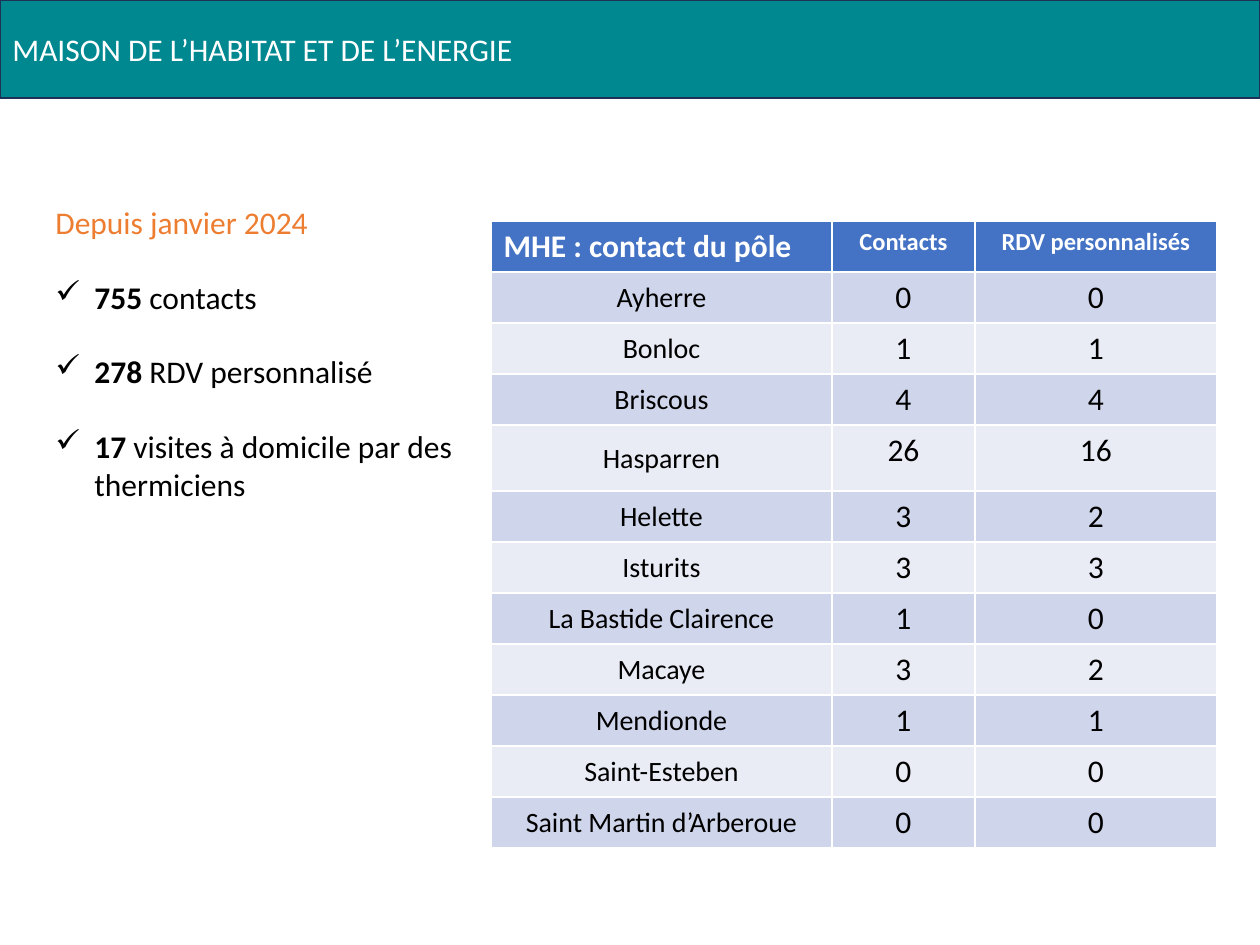
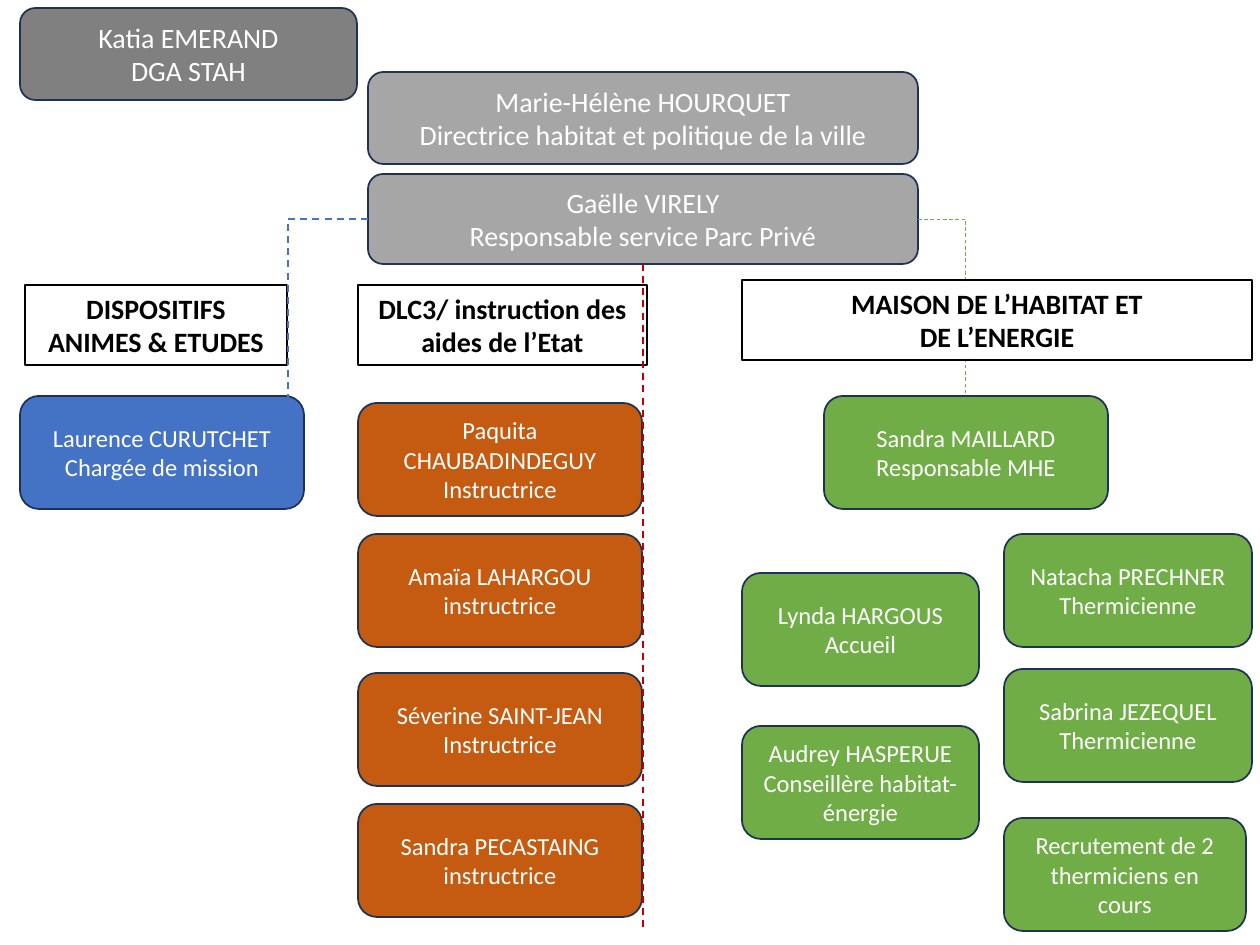
from lxml import etree
from pptx import Presentation
from pptx.dml.color import RGBColor
from pptx.enum.dml import MSO_LINE as Dash
from pptx.enum.shapes import MSO_CONNECTOR as Link, MSO_SHAPE as Form
from pptx.enum.text import MSO_ANCHOR as Anchor, PP_ALIGN as Align
from pptx.oxml.ns import qn
from pptx.util import Pt

SCALE = 914400 / 126
FONT = "Calibri"
WHITE, BLACK, NAVY, TEAL = "FFFFFF", "000000", "1E3256", "008891"
BLUE, ORANGE, RUST, GREEN, RED = "4472C4", "ED7D31", "C55A11", "70AD47", "C00000"
DARK, GREY = "808080", "A6A6A6"
BANDS = ("E9EBF5", "CFD5EA")

FACTS = [
    ("755", " contacts"),
    ("278", " RDV personnalisé"),
    ("17", " visites à domicile par des thermiciens"),
]
HEADS = ("MHE : contact du pôle", "Contacts", "RDV personnalisés")
TOWNS = [
    ("Ayherre", 0, 0),
    ("Bonloc", 1, 1),
    ("Briscous", 4, 4),
    ("Hasparren", 26, 16),
    ("Helette", 3, 2),
    ("Isturits", 3, 3),
    ("La Bastide Clairence", 1, 0),
    ("Macaye", 3, 2),
    ("Mendionde", 1, 1),
    ("Saint-Esteben", 0, 0),
    ("Saint Martin d’Arberoue", 0, 0),
]
STAFF = [
    (0, 403, 284, "Paquita CHAUBADINDEGUY\nInstructrice"),
    (0, 534, 284, "Amaïa LAHARGOU\ninstructrice"),
    (0, 673, 284, "Séverine SAINT-JEAN\nInstructrice"),
    (0, 804, 284, "Sandra PECASTAING\ninstructrice"),
]
TEAM = [
    (0, 573, 237, "Lynda HARGOUS\nAccueil"),
    (0, 726, 237, "Audrey HASPERUE\nConseillère habitat- énergie"),
    (262, 534, 248, "Natacha PRECHNER\nThermicienne"),
    (262, 669, 248, "Sabrina JEZEQUEL\nThermicienne"),
    (262, 818, 242, "Recrutement de 2 thermiciens en cours"),
]


def px(*nums):
    """Turn px into EMU."""
    return [round(n * SCALE) for n in nums]


def rgb(code):
    """Turn a hex string into a colour."""
    return RGBColor.from_string(code)


def style(run, size, color, bold=False):
    """Format one run."""
    font = run.font
    font.name, font.size, font.bold = FONT, Pt(size), bold
    font.color.rgb = rgb(color)


def write(frame, text, size, color, bold=False, align=Align.CENTER):
    """Fill a text frame with paragraphs of one style."""
    frame.text = text
    for para in frame.paragraphs:
        para.alignment = align
        for run in para.runs:
            style(run, size, color, bold)


def panel(slide, box, form, fill, line, width):
    """Draw a preset shape and return it."""
    shape = slide.shapes.add_shape(form, *px(*box))
    shape.shadow.inherit = False
    if fill:
        shape.fill.solid()
        shape.fill.fore_color.rgb = rgb(fill)
    else:
        shape.fill.background()
    shape.line.color.rgb = rgb(line)
    shape.line.width = Pt(width)
    shape.text_frame.word_wrap = True
    return shape


def banner(slide, box, text):
    """Draw the title band."""
    shape = panel(slide, box, Form.RECTANGLE, TEAL, NAVY, 1)
    write(shape.text_frame, text, 18, WHITE, align=Align.LEFT)


def card(slide, box, text, fill, size=14):
    """Draw the rounded box of one person."""
    shape = panel(slide, box, Form.ROUNDED_RECTANGLE, fill, NAVY, 1)
    write(shape.text_frame, text, size, WHITE)
    return shape


def label(slide, box, text, fill=None):
    """Draw the framed name of a unit."""
    shape = panel(slide, box, Form.RECTANGLE, fill, BLACK, 0.75)
    shape.text_frame.vertical_anchor = Anchor.TOP
    write(shape.text_frame, text, 16, BLACK, True)


def wire(slide, ends, color, width, start, side, bent=False):
    """Draw a dashed connector that leaves one side of a card."""
    kind = Link.ELBOW if bent else Link.STRAIGHT
    line = slide.shapes.add_connector(kind, *px(*ends))
    line.begin_connect(start, side)
    line.line.color.rgb = rgb(color)
    line.line.width = Pt(width)
    line.line.dash_style = Dash.DASH
    props = line._element.spPr
    etree.SubElement(props, qn("a:effectLst"))
    if bent:
        props.find(qn("a:prstGeom")).set("prst", "bentConnector2")
    return line


def facts(slide, box):
    """Write the dated heading and the ticked figures."""
    frame = slide.shapes.add_textbox(*px(*box)).text_frame
    frame.word_wrap = True
    write(frame, "Depuis janvier 2024", 18, ORANGE, align=Align.LEFT)
    for count, rest in FACTS:
        para = frame.add_paragraph()
        props = para._p.get_or_add_pPr()
        indent = px(39)[0]
        props.set("marL", str(indent))
        props.set("indent", str(-indent))
        etree.SubElement(props, qn("a:buChar"), char="✓")
        para.space_before = Pt(21)
        for text, bold in ((count, True), (rest, False)):
            run = para.add_run()
            run.text = text
            style(run, 18, BLACK, bold)


def paint(cell, text, fill, size, color, bold=False, align=Align.CENTER):
    """Fill and write one table cell."""
    cell.fill.solid()
    cell.fill.fore_color.rgb = rgb(fill)
    write(cell.text_frame, text, size, color, bold, align)


def towns(slide, box):
    """Build the table of contacts by town."""
    table = slide.shapes.add_table(len(TOWNS) + 1, len(HEADS), *px(*box)).table
    for col, width in zip(table.columns, px(341, 143, 242)):
        col.width = width
    for row in table.rows:
        row.height = px(51)[0]
    table.rows[4].height = px(66)[0]
    for c, head in enumerate(HEADS):
        size, align = (14, Align.CENTER) if c else (18, Align.LEFT)
        paint(table.cell(0, c), head, BLUE, size, WHITE, True, align)
    for r, town in enumerate(TOWNS, 1):
        for c, value in enumerate(town):
            paint(table.cell(r, c), str(value), BANDS[r % 2], 18 if c else 16, BLACK)
        name = table.cell(r, 0)
        name.vertical_anchor = Anchor.MIDDLE
        name.margin_left = name.margin_right = name.margin_top = px(1)[0]
        name.margin_bottom = 0


def group(slide, left, people, fill):
    """Place the cards of one unit from its left edge."""
    for x, y, width, text in people:
        card(slide, (left + x, y, width, 113), text, fill)


def house(slide):
    """Build the slide of figures."""
    banner(slide, (0, 0, 1260, 98), "MAISON DE L’HABITAT ET DE L’ENERGIE")
    facts(slide, (43, 197, 474, 357))
    towns(slide, (491, 221, 726, 627))


def chart(slide):
    """Build the organisation chart."""
    card(slide, (20, 8, 337, 92), "Katia EMERAND\nDGA STAH", DARK, 16)
    card(slide, (368, 72, 550, 92),
         "Marie-Hélène HOURQUET\nDirectrice habitat et politique de la ville", GREY, 16)
    chief = card(slide, (368, 174, 550, 90),
                 "Gaëlle VIRELY\nResponsable service Parc Privé", GREY, 16)
    card(slide, (20, 396, 284, 113), "Laurence CURUTCHET\nChargée de mission", BLUE)
    lead = card(slide, (824, 396, 284, 113), "Sandra MAILLARD\nResponsable MHE", GREEN)
    group(slide, 358, STAFF, RUST)
    group(slide, 742, TEAM, GREEN)
    label(slide, (25, 285, 262, 80), "DISPOSITIFS ANIMES & ETUDES")
    label(slide, (358, 285, 289, 80), "DLC3/ instruction des aides de l’Etat")
    wire(slide, (368, 219, 288, 447), BLUE, 1, chief, 1, True)
    wire(slide, (643, 264, 643, 930), RED, 1, chief, 2)
    link = wire(slide, (918, 219, 966, 396), GREEN, 0.5, chief, 3, True)
    link.end_connect(lead, 0)
    label(slide, (742, 280, 510, 80), "MAISON DE L’HABITAT ET\nDE L’ENERGIE", WHITE)


def main():
    """Build and save the deck."""
    deck = Presentation()
    deck.slide_width, deck.slide_height = px(1260, 945)
    for build in (house, chart):
        build(deck.slides.add_slide(deck.slide_layouts[6]))
    deck.save("out.pptx")


if __name__ == "__main__":
    main()
